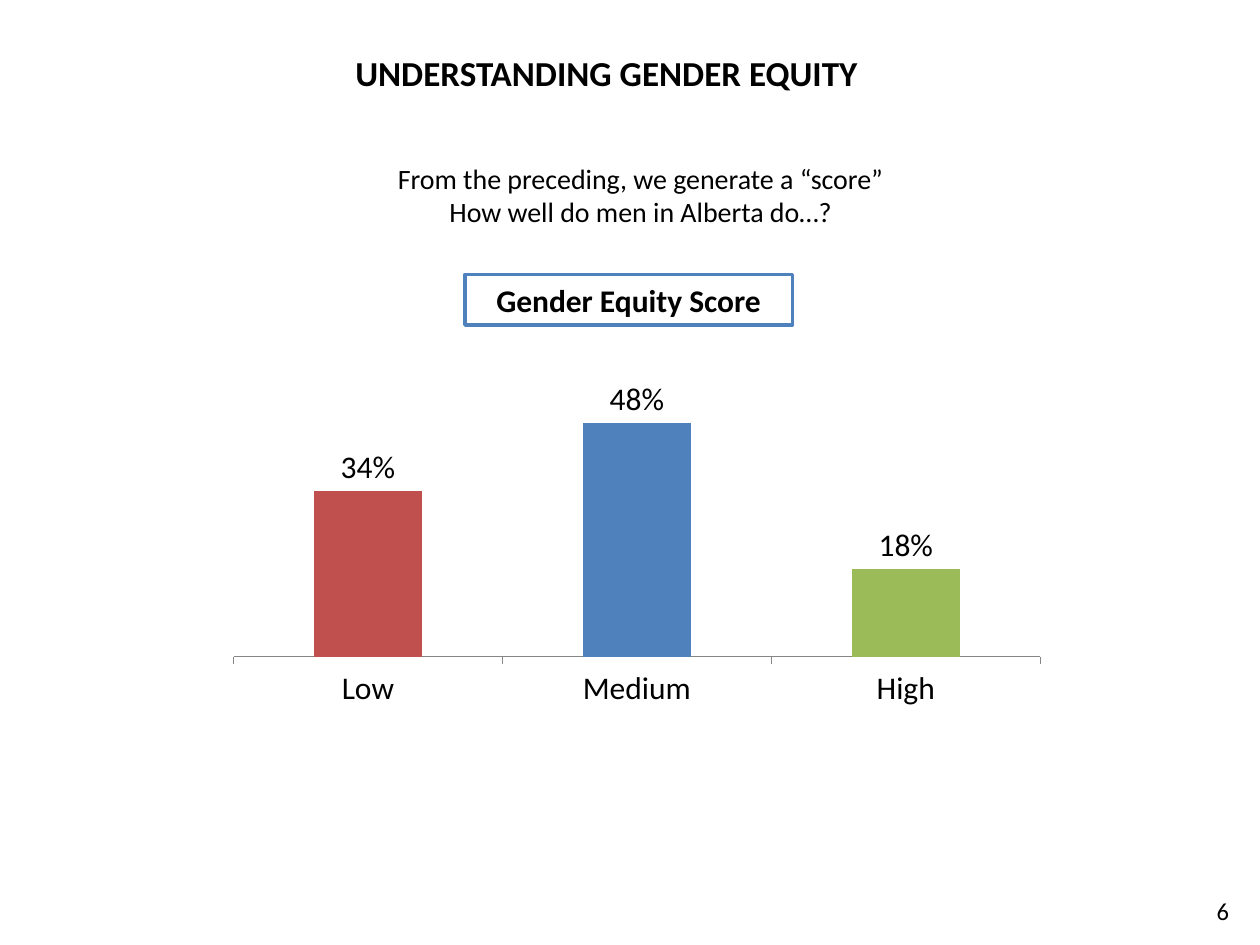
from lxml import etree
from pptx import Presentation
from pptx.chart.data import CategoryChartData
from pptx.dml.color import RGBColor
from pptx.enum.chart import XL_CHART_TYPE, XL_LABEL_POSITION, XL_TICK_LABEL_POSITION, XL_TICK_MARK
from pptx.enum.shapes import MSO_SHAPE
from pptx.enum.text import MSO_ANCHOR, MSO_AUTO_SIZE, PP_ALIGN
from pptx.oxml.ns import qn
from pptx.util import Inches, Pt

FONT = "Calibri"
COLORS = {
    "text": "000000",
    "white": "FFFFFF",
    "axis": "868686",
    "low": "C0504D",
    "medium": "4F81BD",
    "high": "9BBB59",
}
SCORES = {"Low": 0.34, "Medium": 0.48, "High": 0.18}


def color(name):
    return RGBColor.from_string(COLORS[name])


def format_font(font, size, bold=False):
    font.name = FONT
    font.size = Pt(size)
    font.bold = bold
    font.color.rgb = color("text")


def write_text(shape, text, size, bold=False, alignment=PP_ALIGN.CENTER):
    text_frame = shape.text_frame
    text_frame.text = text
    text_frame.word_wrap = True
    text_frame.auto_size = MSO_AUTO_SIZE.NONE
    text_frame.vertical_anchor = MSO_ANCHOR.TOP
    for paragraph in text_frame.paragraphs:
        paragraph.alignment = alignment
        for run in paragraph.runs:
            format_font(run.font, size, bold)


def add_title(slide, left, top, width, height):
    title = slide.shapes.title
    title.left, title.top, title.width, title.height = left, top, width, height
    write_text(title, "UNDERSTANDING GENDER EQUITY", 20, True, PP_ALIGN.LEFT)


def add_text(slide, text, size, left, top, width, height):
    text_box = slide.shapes.add_textbox(left, top, width, height)
    write_text(text_box, text, size)


def add_score_label(slide, left, top, width, height):
    label = slide.shapes.add_shape(MSO_SHAPE.RECTANGLE, left, top, width, height)
    label.shadow.inherit = False
    label.fill.solid()
    label.fill.fore_color.rgb = color("white")
    label.line.color.rgb = color("medium")
    label.line.width = Pt(2)
    write_text(label, "Gender Equity Score", 18, True)


def set_plot_layout(chart, **fractions):
    """Fix the inner plot area as fractions of the chart frame."""
    plot_area = chart._chartSpace.chart.plotArea
    for old_layout in plot_area.findall(qn("c:layout")):
        plot_area.remove(old_layout)
    layout = etree.Element(qn("c:layout"))
    manual = etree.SubElement(layout, qn("c:manualLayout"))
    settings = {"layoutTarget": "inner", "xMode": "edge", "yMode": "edge", **fractions}
    for name, value in settings.items():
        etree.SubElement(manual, qn(f"c:{name}")).set("val", str(value))
    plot_area.insert(0, layout)


def add_score_chart(slide, left, top, width, height):
    chart_data = CategoryChartData(number_format="0%")
    chart_data.categories = list(SCORES)
    chart_data.add_series("Series 1", list(SCORES.values()))
    chart = slide.shapes.add_chart(
        XL_CHART_TYPE.COLUMN_CLUSTERED, left, top, width, height, chart_data
    ).chart
    chart.has_legend = False
    chart.has_title = False
    format_font(chart.font, 18)
    set_plot_layout(chart, x=0.02, y=0.02, w=0.96, h=0.87)

    # Axes
    value_axis = chart.value_axis
    value_axis.minimum_scale, value_axis.maximum_scale = 0, 1
    value_axis.has_major_gridlines = False
    value_axis.visible = False
    category_axis = chart.category_axis
    category_axis.major_tick_mark = XL_TICK_MARK.OUTSIDE
    category_axis.tick_label_position = XL_TICK_LABEL_POSITION.NEXT_TO_AXIS
    category_axis.format.line.color.rgb = color("axis")

    # Columns and their labels
    plot = chart.plots[0]
    plot.gap_width = 150
    plot.vary_by_categories = False
    series = plot.series[0]
    series.format.fill.solid()
    series.format.fill.fore_color.rgb = color("medium")
    for index, category in enumerate(SCORES):
        fill = series.points[index].format.fill
        fill.solid()
        fill.fore_color.rgb = color(category.lower())
    labels = series.data_labels
    labels.show_value = True
    labels.number_format = "0%"
    labels.number_format_is_linked = False
    labels.position = XL_LABEL_POSITION.OUTSIDE_END
    format_font(labels.font, 18)


def main():
    presentation = Presentation()
    presentation.slide_width, presentation.slide_height = Inches(10), Inches(7.5)
    slide = presentation.slides.add_slide(presentation.slide_layouts[5])

    add_score_chart(slide, Inches(1.72), Inches(1.26), Inches(6.67), Inches(4.44))
    add_title(slide, Inches(2.72), Inches(0.36), Inches(5.2), Inches(0.44))
    introduction = "From the preceding, we generate a “score”\nHow well do men in Alberta do…?"
    add_text(slide, introduction, 16, Inches(0.91), Inches(1.23), Inches(8.35), Inches(0.64))
    add_score_label(slide, Inches(3.69), Inches(2.18), Inches(2.6), Inches(0.4))
    # Page number
    add_text(slide, "6", 14, Inches(9.41), Inches(7.06), Inches(0.59), Inches(0.44))

    presentation.save("out.pptx")


if __name__ == "__main__":
    main()
